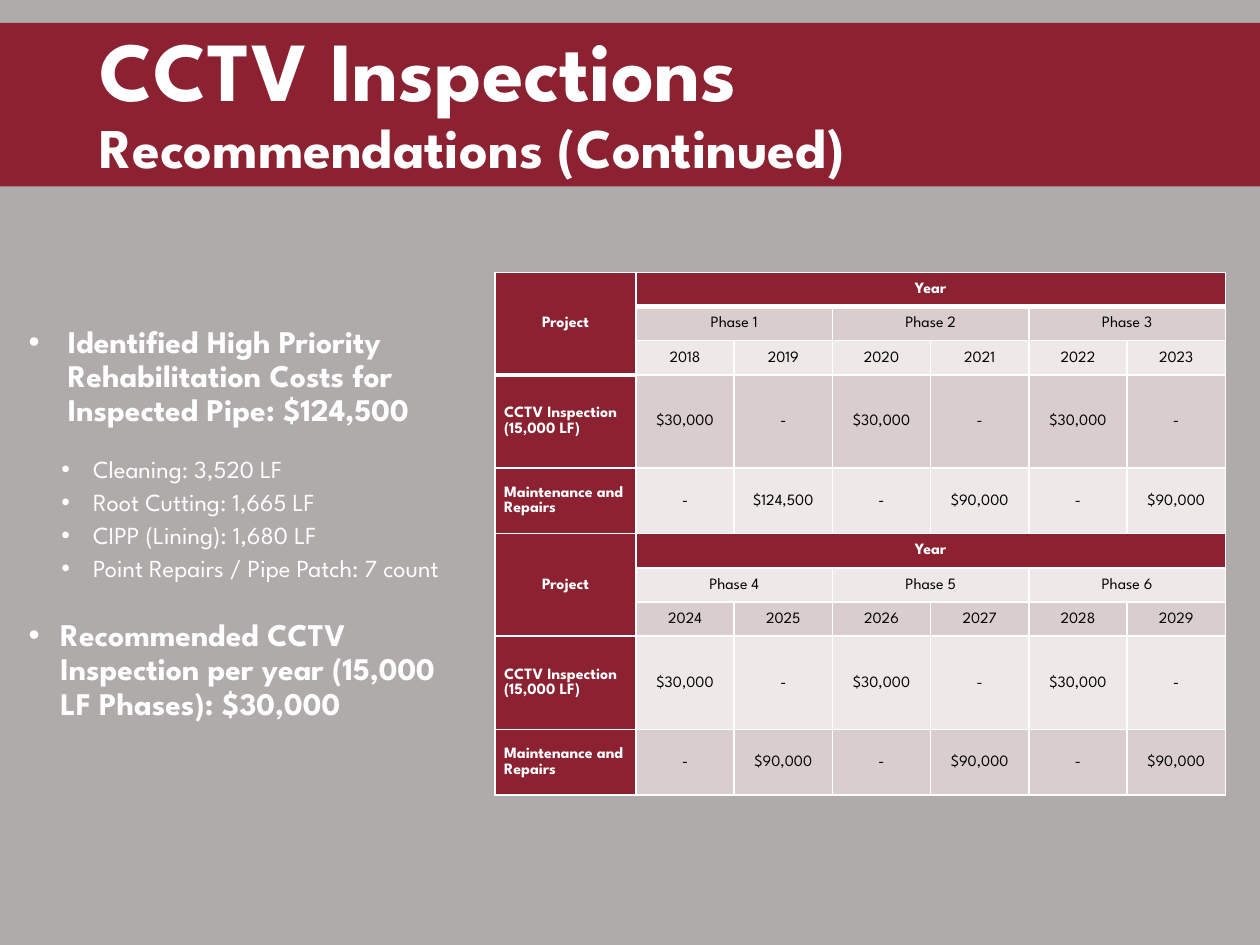
from lxml import etree
from pptx import Presentation
from pptx.dml.color import RGBColor
from pptx.enum import shapes, text
from pptx.oxml import ns
from pptx.util import Cm, Pt

GREY = RGBColor(0xAF, 0xAB, 0xAB)
MAROON = RGBColor(0x8B, 0x21, 0x31)
ROSE = RGBColor(0xDA, 0xCD, 0xCE)
PALE = RGBColor(0xEE, 0xE8, 0xE8)
WHITE = RGBColor(0xFF, 0xFF, 0xFF)
BLACK = RGBColor(0, 0, 0)
FONT = "League Spartan"

PHASES = [
    (1, 2018, ["-", "$124,500", "-", "$90,000", "-", "$90,000"]),
    (4, 2024, ["-", "$90,000"] * 3),
]
INSPECTIONS = ["$30,000", "-"] * 3
BLOCK_HEIGHTS = [0.69, 0.69, 0.69, 1.88, 1.32]

BULLETS = [
    ("Identified High Priority Rehabilitation Costs for Inspected Pipe: $124,500", 0, 0.79, 0.79, 0),
    ("Cleaning: 3,520 LF", 1, 1.3, 0.64, 16.5),
    ("Root Cutting: 1,665 LF", 1, 1.3, 0.64, 3.8),
    ("CIPP (Lining): 1,680 LF", 1, 1.3, 0.64, 3.8),
    ("Point Repairs / Pipe Patch: 7 count", 1, 1.3, 0.64, 3.8),
    ("Recommended CCTV Inspection per year (15,000 LF Phases): $30,000", 0, 0.64, 0.64, 21),
]


def style_font(font, size, color, bold):
    font.name = FONT
    font.size = Pt(size)
    font.color.rgb = color
    font.bold = bold


def add_header(slide, left, top, width, height):
    band = slide.shapes.add_shape(shapes.MSO_SHAPE.RECTANGLE, left, top, width, height)
    band.shadow.inherit = False
    band.fill.solid()
    band.fill.fore_color.rgb = MAROON
    band.line.fill.background()

    title = slide.shapes.add_textbox(left + Cm(1.75), top, width - Cm(3.5), height)
    frame = title.text_frame
    frame.word_wrap = True
    frame.vertical_anchor = text.MSO_ANCHOR.MIDDLE
    frame.text = "CCTV Inspections\vRecommendations (Continued)"
    paragraph = frame.paragraphs[0]
    paragraph.line_spacing = 0.9
    for run, size in zip(paragraph.runs, (48, 32)):
        style_font(run.font, size, WHITE, True)


def add_bullets(slide, left, top, width, height):
    frame = slide.shapes.add_textbox(left, top, width, height).text_frame
    frame.word_wrap = True
    for index, (words, level, margin, hanging, space) in enumerate(BULLETS):
        paragraph = frame.add_paragraph() if index else frame.paragraphs[0]
        paragraph.text = words
        paragraph.level = level
        paragraph.line_spacing = 0.9
        paragraph.space_before = Pt(space)
        properties = paragraph._p.get_or_add_pPr()
        properties.set("marL", str(Cm(margin)))
        properties.set("indent", str(-Cm(hanging)))
        etree.SubElement(properties, ns.qn("a:buFont"), typeface="Arial")
        etree.SubElement(properties, ns.qn("a:buChar"), char="•")
        style_font(paragraph.runs[0].font, 14 if level else 18, WHITE, level == 0)


def set_borders(cell, bottom):
    properties = cell._tc.get_or_add_tcPr()
    widths = {"a:lnL": 1, "a:lnR": 1, "a:lnT": 1, "a:lnB": bottom}
    for index, (side, points) in enumerate(widths.items()):
        line = etree.Element(ns.qn(side), w=str(Pt(points)))
        fill = etree.SubElement(line, ns.qn("a:solidFill"))
        etree.SubElement(fill, ns.qn("a:srgbClr"), val=str(WHITE))
        properties.insert(index, line)


def write_cell(cell, words, centred=True):
    cell.text = words
    paragraph = cell.text_frame.paragraphs[0]
    paragraph.line_spacing = 1.07
    paragraph.alignment = text.PP_ALIGN.CENTER if centred else text.PP_ALIGN.LEFT


def fill_block(table, first_row, phase, year, repairs):
    table.cell(first_row, 0).merge(table.cell(first_row + 2, 0))
    write_cell(table.cell(first_row, 0), "Project")
    table.cell(first_row, 1).merge(table.cell(first_row, 6))
    write_cell(table.cell(first_row, 1), "Year")
    for pair in range(3):
        column = 1 + 2 * pair
        table.cell(first_row + 1, column).merge(table.cell(first_row + 1, column + 1))
        write_cell(table.cell(first_row + 1, column), f"Phase {phase + pair}")
    write_cell(table.cell(first_row + 3, 0), "CCTV Inspection (15,000 LF)", False)
    write_cell(table.cell(first_row + 4, 0), "Maintenance and Repairs", False)
    for index in range(6):
        column = index + 1
        write_cell(table.cell(first_row + 2, column), str(year + index))
        write_cell(table.cell(first_row + 3, column), INSPECTIONS[index])
        write_cell(table.cell(first_row + 4, column), repairs[index])


def add_cost_table(slide, left, top, width, height):
    heights = BLOCK_HEIGHTS * len(PHASES)
    table = slide.shapes.add_table(len(heights), 7, left, top, width, height).table
    for row, row_height in zip(table.rows, heights):
        row.height = Cm(row_height)
    for index, column in enumerate(table.columns):
        column.width = Cm(1.98 if index else 2.84)
    for block, (phase, year, repairs) in enumerate(PHASES):
        fill_block(table, block * len(BLOCK_HEIGHTS), phase, year, repairs)

    for row in range(len(heights)):
        for column in range(7):
            cell = table.cell(row, column)
            heading = column == 0 or row % len(BLOCK_HEIGHTS) == 0
            cell.vertical_anchor = text.MSO_ANCHOR.MIDDLE
            cell.margin_left = cell.margin_right = Cm(0.18)
            cell.margin_top = cell.margin_bottom = 0
            cell.fill.solid()
            cell.fill.fore_color.rgb = MAROON if heading else ROSE if row % 2 else PALE
            thick = row == 0 or (column == 0 and row < 3)
            set_borders(cell, 3 if thick else 1)
            for run in cell.text_frame.paragraphs[0].runs:
                style_font(run.font, 9, WHITE if heading else BLACK, heading)


def main():
    presentation = Presentation()
    presentation.slide_width = Cm(25.4)
    presentation.slide_height = Cm(19.05)
    slide = presentation.slides.add_slide(presentation.slide_layouts[6])
    slide.background.fill.solid()
    slide.background.fill.fore_color.rgb = GREY
    add_header(slide, 0, Cm(0.46), presentation.slide_width, Cm(3.3))
    add_cost_table(slide, Cm(9.98), Cm(5.49), Cm(14.72), Cm(10.54))
    add_bullets(slide, Cm(0.33), Cm(6.45), Cm(9.3), Cm(8.5))
    presentation.save("out.pptx")


if __name__ == "__main__":
    main()
